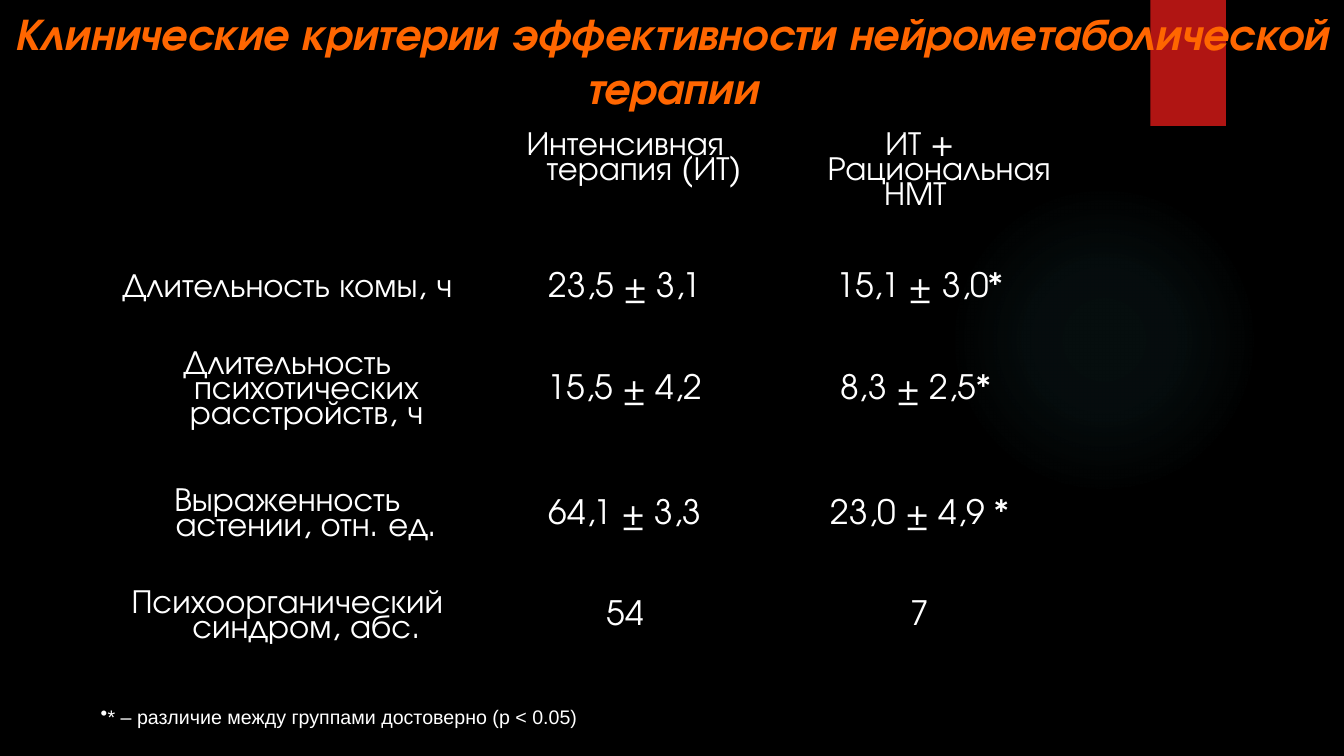
from lxml import etree
from pptx import Presentation
from pptx.dml.color import RGBColor
from pptx.enum import shapes, text
from pptx.oxml import parse_xml
from pptx.oxml.ns import nsdecls, qn
from pptx.util import Inches, Pt

TITLE = "Клинические критерии эффективности нейрометаболической терапии"
FOOTNOTE = "* – различие между группами достоверно (p < 0.05)"
CRITERIA = [
    ["", "Интенсивная терапия (ИТ)", "ИТ + Рациональная\nНМТ "],
    ["Длительность комы, ч", "23,5 ± 3,1", "15,1 ± 3,0*"],
    ["Длительность психотических расстройств, ч", "15,5 ± 4,2", "8,3 ± 2,5* "],
    ["Выраженность астении, отн. ед.", "64,1 ± 3,3", "23,0 ± 4,9 *"],
    ["Психоорганический синдром, абс.", "54", "7"],
]
COLUMN_WIDTHS = [3.9, 2.8, 3.05]
ROW_HEIGHTS = [1.31, 0.56, 1.46, 1.01, 1.01]
NO_GRID_STYLE = "{2D5ABB26-0587-4C30-8999-92F81FD0307C}"
GLOW_STOPS = [(0, 7), (36, 6), (69, 0)]


def color(hex_value):
    return RGBColor.from_string(hex_value)


def box(*lengths):
    return [Inches(length) for length in lengths]


def apply(target, **values):
    for name, value in values.items():
        setattr(target, name, value)


class CriteriaSlide:
    heading_face = "TeX Gyre Adventor"
    note_face = "Arial"
    white, orange, red, teal = "FFFFFF", "FF6600", "B01513", "50B9C1"

    def __init__(self, deck):
        self.slide = deck.slides.add_slide(deck.slide_layouts[5])
        fill = self.slide.background.fill
        fill.solid()
        fill.fore_color.rgb = color("000000")

    def font(self, paragraph, hex_value, **values):
        apply(paragraph.font, **values)
        paragraph.font.color.rgb = color(hex_value)

    def decoration(self, preset, *place):
        shape = self.slide.shapes.add_shape(preset, *box(*place))
        shape.shadow.inherit = False
        shape.line.fill.background()
        return shape

    def glow(self, *place):
        """Add a soft circle that fades out towards its edge."""
        circle = self.decoration(shapes.MSO_SHAPE.OVAL, *place)
        stops = "".join(
            f'<a:gs pos="{at * 1000}"><a:srgbClr val="{self.teal}">'
            f'<a:alpha val="{alpha * 1000}"/></a:srgbClr></a:gs>'
            for at, alpha in GLOW_STOPS)
        gradient = parse_xml(
            f'<a:gradFill {nsdecls("a")}><a:gsLst>{stops}</a:gsLst><a:path path="circle">'
            '<a:fillToRect l="50000" t="50000" r="50000" b="50000"/></a:path></a:gradFill>')
        circle.element.spPr.find(qn("a:prstGeom")).addnext(gradient)

    def bookmark(self, *place):
        ribbon = self.decoration(shapes.MSO_SHAPE.RECTANGLE, *place)
        ribbon.fill.solid()
        ribbon.fill.fore_color.rgb = color(self.red)
        effects = ribbon.element.spPr.find(qn("a:effectLst"))
        effects.append(parse_xml(
            f'<a:outerShdw {nsdecls("a")} blurRad="{Pt(3)}" dist="{Pt(2)}" dir="5400000" rotWithShape="0">'
            '<a:srgbClr val="000000"><a:alpha val="45000"/></a:srgbClr></a:outerShdw>'))

    def title(self, wording, *place):
        heading = self.slide.shapes.title
        apply(heading, **dict(zip(("left", "top", "width", "height"), box(*place))))
        heading.text_frame.text = wording
        apply(heading.text_frame, word_wrap=True, auto_size=text.MSO_AUTO_SIZE.NONE,
              vertical_anchor=text.MSO_ANCHOR.MIDDLE)
        paragraph = heading.text_frame.paragraphs[0]
        paragraph.alignment = text.PP_ALIGN.CENTER
        self.font(paragraph, self.orange, name=self.heading_face, size=Pt(32), bold=True, italic=True)
        heading.element.getparent().append(heading.element)  # in front of the decorations

    def table(self, rows, *place):
        frame = self.slide.shapes.add_table(len(rows), len(rows[0]), *box(*place))
        grid = frame.table
        apply(grid, first_row=False, horz_banding=False)
        grid._tbl.tblPr.find(qn("a:tableStyleId")).text = NO_GRID_STYLE
        for column, width in zip(grid.columns, COLUMN_WIDTHS):
            column.width = Inches(width)
        for row, height, wordings in zip(grid.rows, ROW_HEIGHTS, rows):
            row.height = Inches(height)
            anchor = text.MSO_ANCHOR.TOP if wordings is rows[0] else text.MSO_ANCHOR.MIDDLE
            for cell, wording in zip(row.cells, wordings):
                self.cell(cell, wording, anchor)

    def cell(self, cell, wording, anchor):
        cell.text = wording
        cell.fill.background()
        apply(cell, vertical_anchor=anchor, margin_left=Inches(0.13), margin_right=Inches(0.13),
              margin_top=Inches(0.05), margin_bottom=Inches(0.05))
        for paragraph in cell.text_frame.paragraphs:
            apply(paragraph, alignment=text.PP_ALIGN.CENTER, line_spacing=0.8)
            indent = Inches(0.38)
            paragraph._p.get_or_add_pPr().set("marL", str(indent))
            paragraph._p.pPr.set("indent", str(-indent))
            self.font(paragraph, self.white, name=self.heading_face, size=Pt(24))

    def footnote(self, wording, *place):
        note = self.slide.shapes.add_textbox(*box(*place)).text_frame
        note.text = wording
        apply(note, word_wrap=True, vertical_anchor=text.MSO_ANCHOR.MIDDLE)
        paragraph = note.paragraphs[0]
        paragraph.alignment = text.PP_ALIGN.JUSTIFY
        properties = paragraph._p.get_or_add_pPr()
        etree.SubElement(properties, qn("a:buChar")).set("char", "•")
        tabs = etree.SubElement(properties, qn("a:tabLst"))
        for stop in (0.25, 1.08):
            tab = etree.SubElement(tabs, qn("a:tab"))
            tab.set("pos", str(Inches(stop)))
            tab.set("algn", "l")
        self.font(paragraph, self.white, name=self.note_face, size=Pt(14))


def main():
    deck = Presentation()
    apply(deck, slide_width=Inches(13.33), slide_height=Inches(7.5))
    page = CriteriaSlide(deck)
    page.glow(9.41, 1.83, 3.08, 3.08)
    page.bookmark(11.41, 0, 0.75, 1.25)
    page.title(TITLE, 0, 0, 13.33, 1.18)
    page.table(CRITERIA, 0.9, 1.29, 9.75, 5.35)
    page.footnote(FOOTNOTE, 0.9, 6.94, 7.19, 0.33)
    deck.save("out.pptx")


if __name__ == "__main__":
    main()
